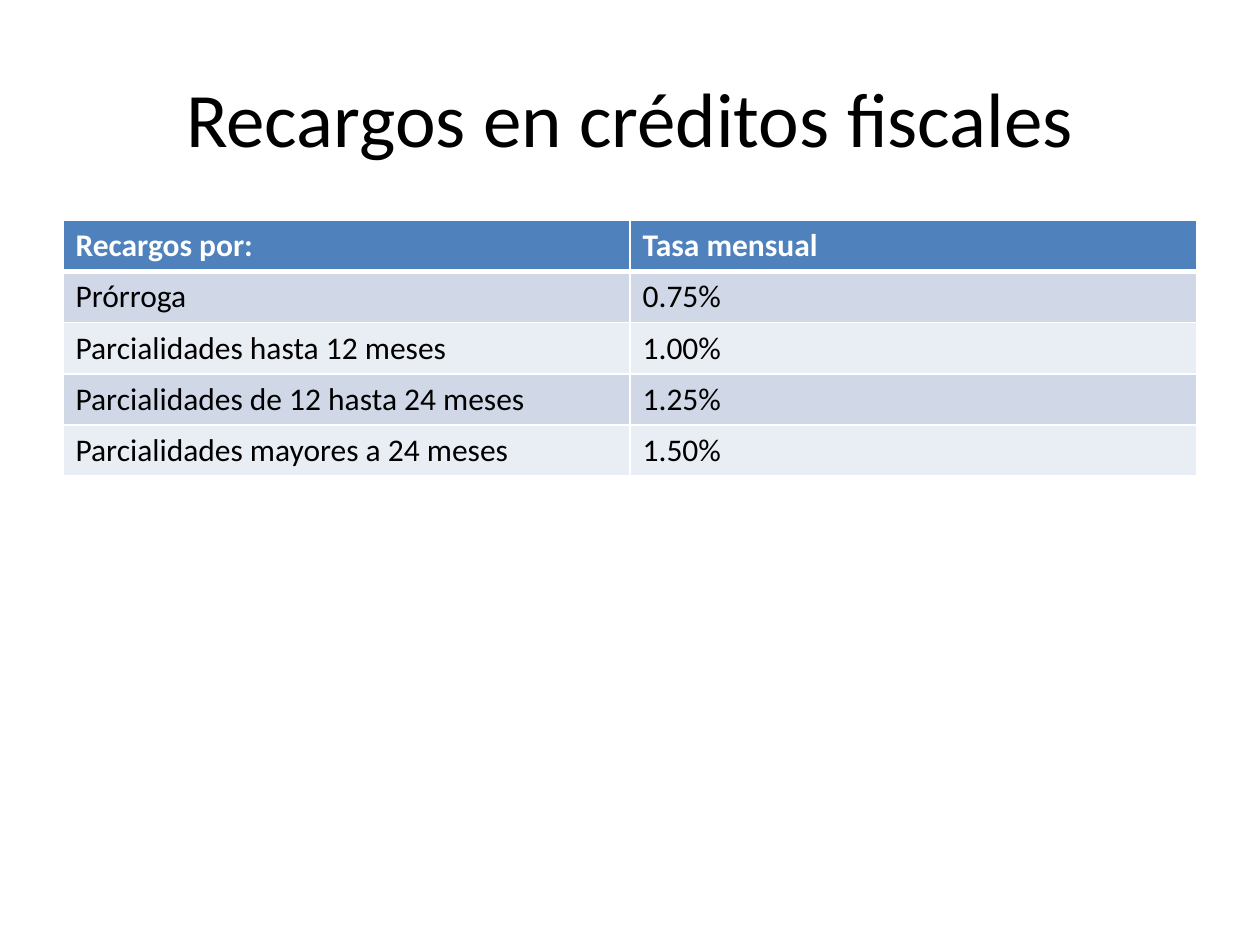
from lxml.etree import SubElement
from pptx import Presentation
from pptx.dml.color import RGBColor
from pptx.enum.text import MSO_ANCHOR, PP_ALIGN
from pptx.oxml.ns import qn
from pptx.util import Pt


def paint(target, color):
    """Give a fill or a font a solid hex colour."""
    if hasattr(target, "solid"):
        target.solid()
        target.fore_color.rgb = RGBColor.from_string(color)
    else:
        target.color.rgb = RGBColor.from_string(color)


def add_border(cell, side, width):
    """Draw a white line on one side (L, R, T or B) of a cell."""
    line = SubElement(cell._tc.get_or_add_tcPr(), qn(f"a:ln{side}"), w=str(Pt(width)))
    fill = SubElement(line, qn("a:solidFill"))
    SubElement(fill, qn("a:srgbClr"), val="FFFFFF")


FONT = "Calibri"
ROWS = [
    ("Recargos por:", "Tasa mensual"),
    ("Prórroga", "0.75%"),
    ("Parcialidades hasta 12 meses", "1.00%"),
    ("Parcialidades de 12 hasta 24 meses", "1.25%"),
    ("Parcialidades mayores a 24 meses", "1.50%"),
]
ROW_HEIGHT = 29.2

deck = Presentation()
deck.slide_width, deck.slide_height = Pt(720), Pt(540)
page = deck.slides.add_slide(deck.slide_layouts[5])

# Title
title = page.shapes.title
title.left, title.top, title.width, title.height = Pt(36), Pt(21.6), Pt(648), Pt(90)
title.text_frame.vertical_anchor = MSO_ANCHOR.MIDDLE
para = title.text_frame.paragraphs[0]
para.alignment = PP_ALIGN.CENTER
span = para.add_run()
span.text = "Recargos en créditos fiscales"
span.font.name, span.font.size = FONT, Pt(44)
paint(span.font, "000000")

# Table of monthly rates
table = page.shapes.add_table(
    len(ROWS), 2, Pt(36), Pt(126), Pt(648), Pt(ROW_HEIGHT * len(ROWS))
).table
for row_index, texts in enumerate(ROWS):
    table.rows[row_index].height = Pt(ROW_HEIGHT)
    is_header = row_index == 0
    band = "4F81BD" if is_header else "D0D8E8" if row_index % 2 else "E9EDF4"
    for column_index, text in enumerate(texts):
        cell = table.cell(row_index, column_index)
        add_border(cell, "L", 1)
        add_border(cell, "R", 1)
        add_border(cell, "T", 3 if row_index == 1 else 1)
        add_border(cell, "B", 3 if is_header else 1)
        paint(cell.fill, band)
        span = cell.text_frame.paragraphs[0].add_run()
        span.text = text
        span.font.name, span.font.size, span.font.bold = FONT, Pt(18), is_header
        paint(span.font, "FFFFFF" if is_header else "000000")

deck.save("out.pptx")
